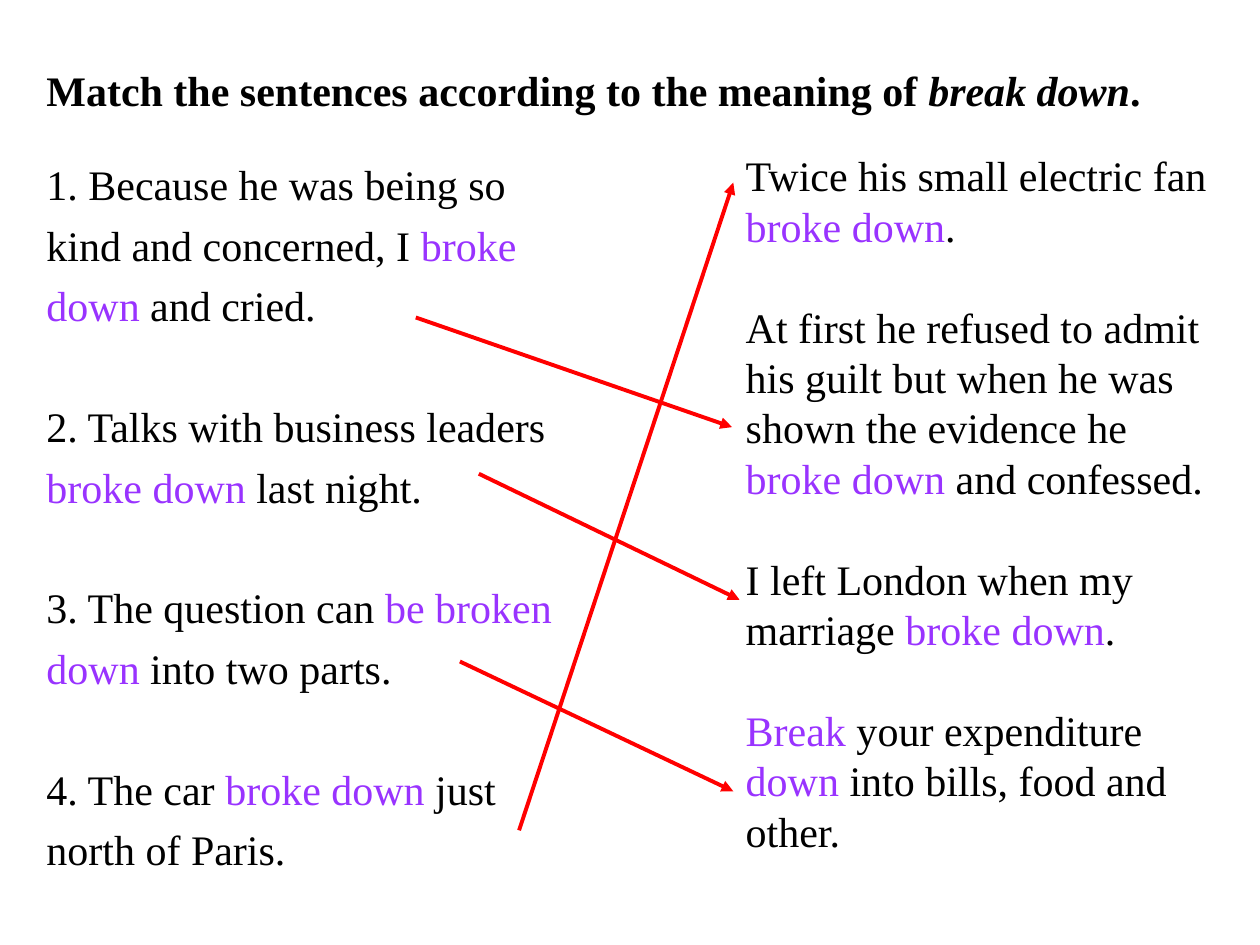
from dataclasses import dataclass

from lxml import etree
from pptx import Presentation
from pptx.dml.color import RGBColor
from pptx.enum import shapes, text
from pptx.oxml import ns
from pptx.util import Inches, Pt


@dataclass(frozen=True)
class Theme:
    font: str = "Times New Roman"
    size: float = 24
    single_line: float = 28.8
    ink: RGBColor = RGBColor(0x00, 0x00, 0x00)
    highlight: RGBColor = RGBColor(0x99, 0x33, 0xFF)
    arrow: RGBColor = RGBColor(0xFF, 0x00, 0x00)
    arrow_width: float = 2.25


THEME = Theme()

# Each sentence is a list of lines; asterisks enclose the phrasal verb
TITLE = [["Match the sentences according to the meaning of *break down*."]]
NUMBERED_SENTENCES = [
    ["1. Because he was being so", "kind and concerned, I *broke*", "*down* and cried."],
    ["2. Talks with business leaders", "*broke down* last night."],
    ["3. The question can *be broken*", "*down* into two parts."],
    ["4. The car *broke down* just", "north of Paris."],
]
MATCHING_SENTENCES = [
    ["Twice his small electric fan", "*broke down*."],
    ["At first he refused to admit", "his guilt but when he was",
     "shown the evidence he", "*broke down* and confessed."],
    ["I left London when my", "marriage *broke down*."],
    ["*Break* your expenditure *down* into bills, food and other."],
]
ARROWS = [
    ((3.3, 2.52), (5.81, 3.39)),
    ((3.8, 3.76), (5.87, 4.76)),
    ((4.12, 6.59), (5.82, 1.45)),
    ((3.65, 5.25), (5.82, 6.28)),
]


def add_runs(paragraph, line, heading):
    for index, part in enumerate(line.split("*")):
        if not part:
            continue
        marked = index % 2 == 1
        run = paragraph.add_run()
        run.text = part
        run.font.name = THEME.font
        run.font.size = Pt(THEME.size)
        run.font.bold = heading
        run.font.italic = heading and marked
        run.font.color.rgb = THEME.highlight if marked and not heading else THEME.ink


def add_sentences(slide, box, sentences, spacing=1.0, wrap=True, heading=False):
    """Set sentences in a box, one empty line's height apart."""
    shape = slide.shapes.add_textbox(*(Inches(length) for length in box))
    frame = shape.text_frame
    frame.word_wrap = wrap
    frame.auto_size = text.MSO_AUTO_SIZE.SHAPE_TO_FIT_TEXT
    pitch = Pt(THEME.single_line * spacing)
    paragraph = frame.paragraphs[0]
    for number, sentence in enumerate(sentences):
        for row, line in enumerate(sentence):
            if number or row:
                paragraph = frame.add_paragraph()
            paragraph.alignment = text.PP_ALIGN.LEFT
            paragraph.line_spacing = pitch
            paragraph.space_before = pitch if number and not row else Pt(0)
            add_runs(paragraph, line, heading)


def add_arrow(slide, start, end):
    connector = slide.shapes.add_connector(
        shapes.MSO_CONNECTOR.STRAIGHT, *(Inches(length) for length in start + end))
    connector.line.color.rgb = THEME.arrow
    connector.line.width = Pt(THEME.arrow_width)
    properties = connector._element.spPr
    etree.SubElement(properties.find(ns.qn("a:ln")), ns.qn("a:tailEnd"), type="triangle")
    etree.SubElement(properties, ns.qn("a:effectLst"))


def main():
    presentation = Presentation()
    presentation.slide_width = Inches(10)
    presentation.slide_height = Inches(7.5)
    slide = presentation.slides.add_slide(presentation.slide_layouts[6])

    # Two columns of sentences
    add_sentences(slide, (0.27, 1.13, 4.21, 5.91), NUMBERED_SENTENCES,
                  spacing=1.2, wrap=False)
    add_sentences(slide, (5.82, 1.14, 3.95, 5.75), MATCHING_SENTENCES)

    # Answers
    for start, end in ARROWS:
        add_arrow(slide, start, end)

    # Instruction
    add_sentences(slide, (0.27, 0.34, 9.78, 0.62), TITLE, spacing=1.3, heading=True)

    presentation.save("out.pptx")


if __name__ == "__main__":
    main()
